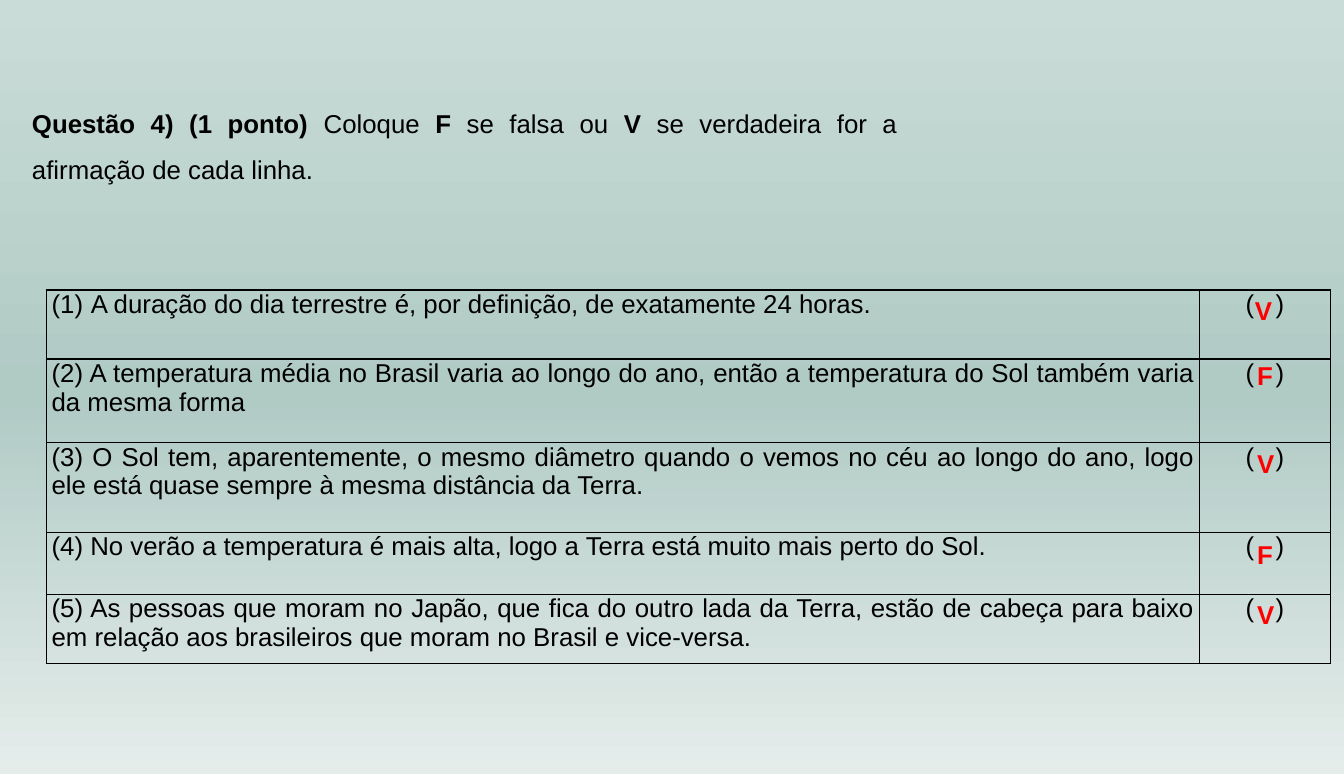
"""Build a true-or-false question slide with an answer table."""
from copy import deepcopy

from lxml.etree import SubElement
from pptx import Presentation
from pptx.dml.color import RGBColor
from pptx.enum.text import MSO_ANCHOR, MSO_AUTO_SIZE, PP_ALIGN
from pptx.oxml import parse_xml
from pptx.oxml.ns import nsdecls, qn
from pptx.util import Inches, Pt

COLORS = {"top": "CADCD8", "middle": "B0CAC4", "bottom": "E5EDEB",
          "text": "000000", "answer": "FF0000"}
BACKGROUND = [("top", 0), ("middle", 0.51), ("bottom", 1)]

QUESTION = [
    ("Questão 4) (1 ponto)", True),
    (" Coloque ", False),
    ("F", True),
    (" se falsa ou ", False),
    ("V", True),
    (" se verdadeira for a afirmação de cada linha.", False),
]
BLANK = "(   )"
STATEMENTS = [
    ("A duração do dia terrestre é, por definição, de exatamente 24 horas.", 0.67),
    ("(2) A temperatura média no Brasil varia ao longo do ano, então a temperatura "
     "do Sol também varia da mesma forma", 0.81),
    ("(3) O Sol tem, aparentemente, o mesmo diâmetro quando o vemos no céu ao longo "
     "do ano, logo ele está quase sempre à mesma distância da Terra.", 0.87),
    ("(4) No verão a temperatura é mais alta, logo a Terra está muito mais perto "
     "do Sol.", 0.6),
    ("(5) As pessoas que moram no Japão, que fica do outro lada da Terra, estão de "
     "cabeça para baixo em relação aos brasileiros que moram no Brasil e vice-versa.",
     0.67),
]
ANSWERS = [("V", 12.06, 2.81), ("F", 12.08, 3.44), ("V", 12.08, 4.29),
           ("F", 12.08, 5.17), ("V", 12.08, 5.75)]
COLUMNS = [11.17, 1.27]


def style(font, color="text", bold=None):
    font.name, font.size, font.bold = "Arial", Pt(18), bold
    font.color.rgb = RGBColor.from_string(COLORS[color])


def paint_background(slide):
    fill = slide.background.fill
    fill.gradient()
    fill.gradient_angle = 270
    first = fill.gradient_stops[0]._gs
    first.addnext(deepcopy(first))
    for stop, (color, position) in zip(fill.gradient_stops, BACKGROUND):
        stop.color.rgb = RGBColor.from_string(COLORS[color])
        stop.position = position


def add_question(slide):
    title = slide.shapes.title
    title.left, title.top, title.width, title.height = map(
        Inches, (0.21, 0.84, 8.58, 1.01))
    frame = title.text_frame
    frame.auto_size = MSO_AUTO_SIZE.NONE
    frame.vertical_anchor = MSO_ANCHOR.TOP
    paragraph = frame.paragraphs[0]
    paragraph.alignment = PP_ALIGN.JUSTIFY
    paragraph.line_spacing = 1.5
    style(paragraph.font)
    for words, bold in QUESTION:
        run = paragraph.add_run()
        run.text = words
        style(run.font, bold=bold)


def format_cell(cell, words, alignment, numbered):
    cell.margin_left = cell.margin_right = Inches(0.05)
    cell.margin_top = cell.margin_bottom = 0
    cell.fill.background()
    properties = cell._tc.get_or_add_tcPr()
    for index, side in enumerate("LRTB"):
        properties.insert(index, parse_xml(
            f'<a:ln{side} {nsdecls("a")} w="12700"><a:solidFill>'
            f'<a:srgbClr val="{COLORS["text"]}"/></a:solidFill></a:ln{side}>'))
    paragraph = cell.text_frame.paragraphs[0]
    paragraph.alignment = alignment
    if numbered:
        layout = paragraph._p.get_or_add_pPr()
        layout.set("marL", str(Inches(0.38)))
        layout.set("indent", str(-Inches(0.38)))
        SubElement(layout, qn("a:buAutoNum"), type="arabicParenBoth")
    style(paragraph.font)
    run = paragraph.add_run()
    run.text = words
    style(run.font)


def add_statements(slide):
    heights = [height for _, height in STATEMENTS]
    table = slide.shapes.add_table(
        len(STATEMENTS), len(COLUMNS), Inches(0.45), Inches(2.81),
        Inches(sum(COLUMNS)), Inches(sum(heights))).table
    table.first_row = table.horz_banding = False
    for column, width in zip(table.columns, COLUMNS):
        column.width = Inches(width)
    for index, (statement, height) in enumerate(STATEMENTS):
        table.rows[index].height = Inches(height)
        format_cell(table.cell(index, 0), statement, PP_ALIGN.JUSTIFY, index == 0)
        format_cell(table.cell(index, 1), BLANK, PP_ALIGN.CENTER, False)


def add_answers(slide):
    for letter, left, top in ANSWERS:
        frame = slide.shapes.add_textbox(
            Inches(left), Inches(top), Inches(0.37), Inches(0.4)).text_frame
        frame.word_wrap = False
        frame.auto_size = MSO_AUTO_SIZE.SHAPE_TO_FIT_TEXT
        paragraph = frame.paragraphs[0]
        paragraph.text = letter
        style(paragraph.font, "answer", True)


def main():
    deck = Presentation()
    deck.slide_width, deck.slide_height = Inches(13.02), Inches(7.5)
    slide = deck.slides.add_slide(deck.slide_layouts[5])
    paint_background(slide)
    add_question(slide)
    add_statements(slide)
    add_answers(slide)
    deck.save("out.pptx")


if __name__ == "__main__":
    main()
